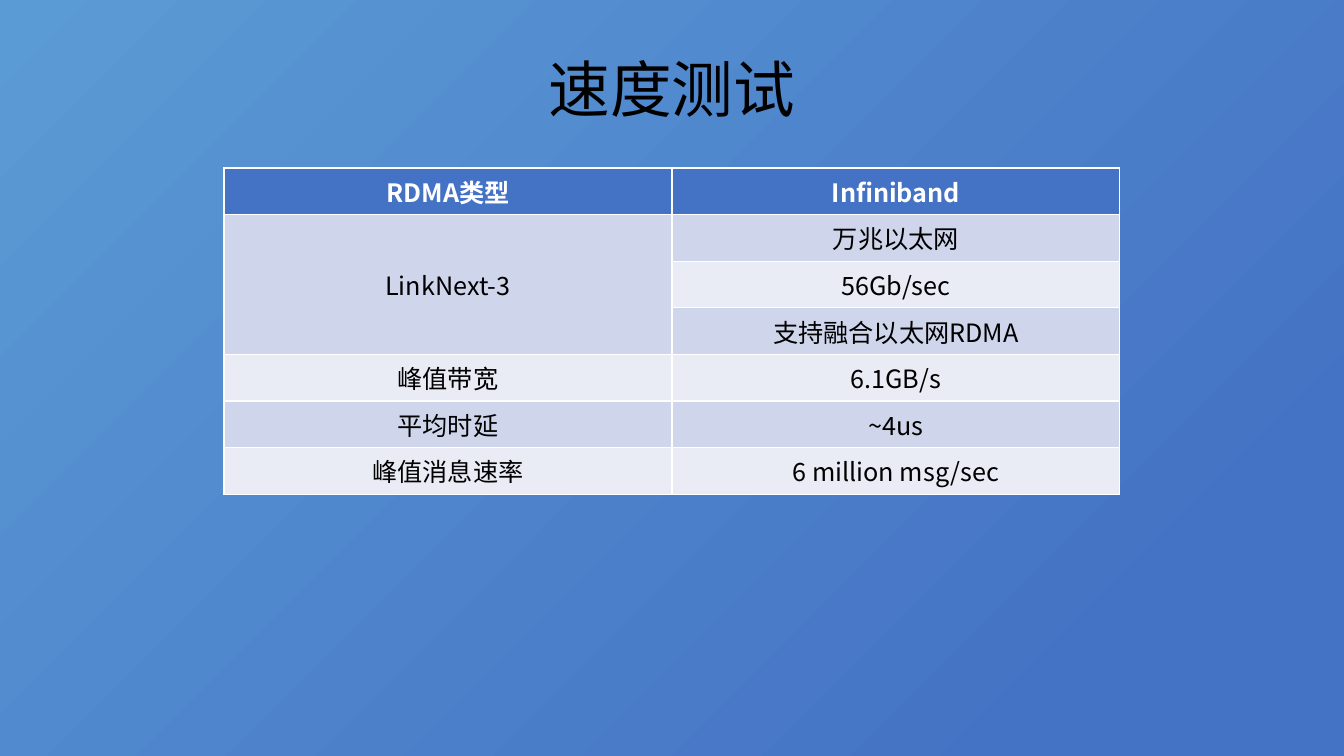
"""Build the speed test slide: a title over a two-column table."""
import pptx
import pptx.util
import pptx.dml.color
import pptx.enum.text
import pptx.oxml.ns
import lxml.etree

TITLE = "速度测试"
ROWS = [
    ("RDMA类型", "Infiniband"),
    ("LinkNext-3", "万兆以太网"),
    ("", "56Gb/sec"),
    ("", "支持融合以太网RDMA"),
    ("峰值带宽", "6.1GB/s"),
    ("平均时延", "~4us"),
    ("峰值消息速率", "6 million msg/sec"),
]
MERGE = (1, 3)
FONT = "Noto Sans CJK SC"
HUES = {
    "sky": "5B9BD5", "blue": "4472C4", "dark": "CFD5EA",
    "light": "E9EBF5", "white": "FFFFFF", "black": "000000",
}
WIDE, HIGH = 960, 540
TABLE_W, TABLE_TOP, ROW_H = 640, 120, 33.3
TITLE_W, TITLE_TOP, TITLE_H = 431, 32.4, 60.5

Pt = pptx.util.Pt
qn = pptx.oxml.ns.qn


def hue(name):
    return pptx.dml.color.RGBColor.from_string(HUES[name])


def write(frame, text, size, color, bold=False):
    frame.text = text
    frame.vertical_anchor = pptx.enum.text.MSO_ANCHOR.MIDDLE
    para = frame.paragraphs[0]
    para.alignment = pptx.enum.text.PP_ALIGN.CENTER
    font = para.font
    font.name, font.size, font.bold = FONT, Pt(size), bold
    font.color.rgb = hue(color)
    props = para._p.pPr.find(qn("a:defRPr"))
    lxml.etree.SubElement(props, qn("a:ea"), typeface=FONT)


def paint(slide):
    fill = slide.background.fill
    fill.gradient()
    fill.gradient_angle = 315
    for stop, spot, name in zip(fill.gradient_stops, (0, 0.85), ("sky", "blue")):
        stop.position = spot
        stop.color.rgb = hue(name)


def add_grid(slide):
    count, cols = len(ROWS), len(ROWS[0])
    grid = slide.shapes.add_table(
        count, cols, Pt((WIDE - TABLE_W) / 2), Pt(TABLE_TOP),
        Pt(TABLE_W), Pt(ROW_H * count)).table
    for r, row in enumerate(ROWS):
        grid.rows[r].height = Pt(ROW_H)
        head = r == 0
        shade = "blue" if head else "dark" if r % 2 else "light"
        for c, text in enumerate(row):
            cell = grid.cell(r, c)
            cell.fill.solid()
            cell.fill.fore_color.rgb = hue(shade)
            cell.vertical_anchor = pptx.enum.text.MSO_ANCHOR.MIDDLE
            write(cell.text_frame, text, 18, "white" if head else "black", head)
    first, last = MERGE
    grid.cell(first, 0).merge(grid.cell(last, 0))


def main():
    deck = pptx.Presentation()
    deck.slide_width, deck.slide_height = Pt(WIDE), Pt(HIGH)
    slide = deck.slides.add_slide(deck.slide_layouts[5])
    paint(slide)
    add_grid(slide)
    title = slide.shapes.title
    title.left, title.top = Pt((WIDE - TITLE_W) / 2), Pt(TITLE_TOP)
    title.width, title.height = Pt(TITLE_W), Pt(TITLE_H)
    write(title.text_frame, TITLE, 44, "black")
    deck.save("out.pptx")


if __name__ == "__main__":
    main()
